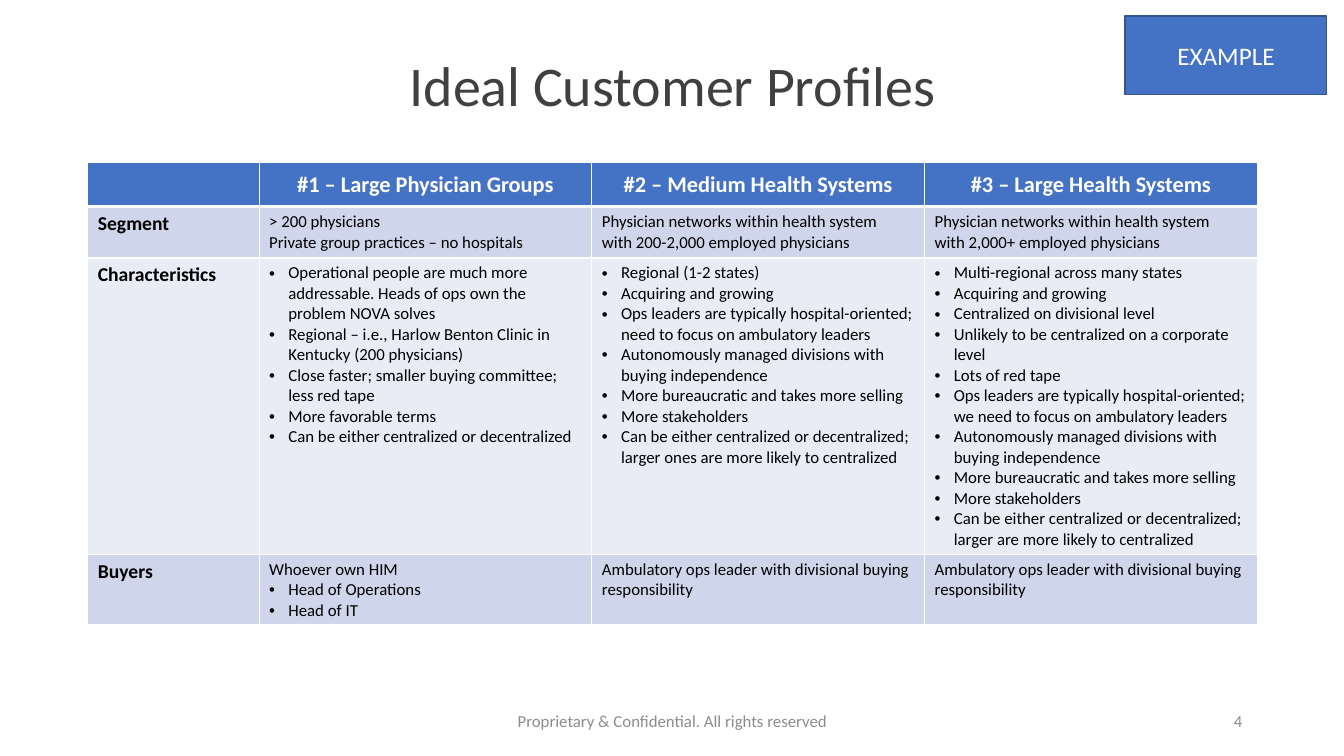
from pptx import Presentation
from pptx import util as u
from pptx.dml.color import RGBColor
from pptx.enum import shapes, text
from pptx.oxml import parse_xml
from pptx.oxml.ns import nsdecls

TITLE = "Ideal Customer Profiles"
TAG = "EXAMPLE"
FOOTER = "Proprietary & Confidential. All rights reserved"
PAGE = "4"

HEADINGS = ["", "#1 – Large Physician Groups", "#2 – Medium Health Systems",
            "#3 – Large Health Systems"]
# Each profile cell is (plain lines, bulleted lines).
ROWS = [
    ("Segment", [
        (["> 200 physicians", "Private group practices – no hospitals"], []),
        (["Physician networks within health system\vwith 200-2,000 employed physicians"], []),
        (["Physician networks within health system\vwith 2,000+ employed physicians"], []),
    ]),
    ("Characteristics", [
        ([], ["Operational people are much more addressable. Heads of ops own the "
              "problem NOVA solves",
              "Regional – i.e., Harlow Benton Clinic in Kentucky (200 physicians)",
              "Close faster; smaller buying committee; less red tape",
              "More favorable terms",
              "Can be either centralized or decentralized"]),
        ([], ["Regional (1-2 states)",
              "Acquiring and growing",
              "Ops leaders are typically hospital-oriented; need to focus on ambulatory leaders",
              "Autonomously managed divisions with buying independence",
              "More bureaucratic and takes more selling",
              "More stakeholders",
              "Can be either centralized or decentralized; larger ones are more likely "
              "to centralized"]),
        ([], ["Multi-regional across many states",
              "Acquiring and growing",
              "Centralized on divisional level",
              "Unlikely to be centralized on a corporate level",
              "Lots of red tape",
              "Ops leaders are typically hospital-oriented; we need to focus on "
              "ambulatory leaders",
              "Autonomously managed divisions with buying independence",
              "More bureaucratic and takes more selling",
              "More stakeholders",
              "Can be either centralized or decentralized; larger are more likely "
              "to centralized"]),
    ]),
    ("Buyers", [
        (["Whoever own HIM"], ["Head of Operations", "Head of IT"]),
        (["Ambulatory ops leader with divisional buying responsibility"], []),
        (["Ambulatory ops leader with divisional buying responsibility"], []),
    ]),
]
COLUMN_WIDTHS = [1.7, 3.3, 3.3, 3.3]
ROW_HEIGHTS = [0.44, 0.51, 2.94, 0.7]
BLUE, WHITE, BLACK, GRAY = "4472C4", "FFFFFF", "000000", "8C8C8C"
BANDS = ["CFD5EA", "E9EBF5"]
LEFT, CENTER, RIGHT = text.PP_ALIGN.LEFT, text.PP_ALIGN.CENTER, text.PP_ALIGN.RIGHT
MIDDLE = text.MSO_ANCHOR.MIDDLE


def paint(color_format, hex_color):
    color_format.rgb = RGBColor.from_string(hex_color)


def inches(*lengths):
    return [u.Inches(length) for length in lengths]


def style(paragraph, size, color, bold=False, align=LEFT):
    paragraph.alignment = align
    font = paragraph.font
    font.name, font.size, font.bold = "Calibri", u.Pt(size), bold
    paint(font.color, color)


def add_bullet(paragraph):
    properties = paragraph._p.get_or_add_pPr()
    indent = u.Inches(0.19)
    properties.set("marL", str(indent))
    properties.set("indent", str(-indent))
    for tag in ('a:buFont %s typeface="Arial"', 'a:buChar %s char="•"'):
        properties.append(parse_xml(f"<{tag % nsdecls('a')}/>"))


def format_cell(cell, fill, bottom=1):
    """Give the cell white borders and a plain fill."""
    for side, width in (("L", 1), ("R", 1), ("T", 1), ("B", bottom)):
        cell._tc.get_or_add_tcPr().append(parse_xml(
            f'<a:ln{side} {nsdecls("a")} w="{u.Pt(width)}"><a:solidFill>'
            f'<a:srgbClr val="{WHITE}"/></a:solidFill></a:ln{side}>'))
    cell.fill.solid()
    paint(cell.fill.fore_color, fill)


def fill_profile(frame, lines, bullets):
    frame.text = "\n".join(lines + bullets)
    for i, paragraph in enumerate(frame.paragraphs):
        if i >= len(lines):
            add_bullet(paragraph)
        style(paragraph, 12, BLACK)


def add_profiles(slide):
    table = slide.shapes.add_table(
        len(ROW_HEIGHTS), len(COLUMN_WIDTHS),
        *inches(0.87, 1.61, sum(COLUMN_WIDTHS), sum(ROW_HEIGHTS))).table
    table.horz_banding = False
    for column, width in zip(table.columns, COLUMN_WIDTHS):
        column.width = u.Inches(width)
    for row, height in zip(table.rows, ROW_HEIGHTS):
        row.height = u.Inches(height)

    for c, heading in enumerate(HEADINGS):
        cell = table.cell(0, c)
        format_cell(cell, BLUE, bottom=3)
        cell.vertical_anchor = MIDDLE
        cell.text = heading
        style(cell.text_frame.paragraphs[0], 16, WHITE, True, CENTER)

    for r, (label, profiles) in enumerate(ROWS, 1):
        for c in range(len(COLUMN_WIDTHS)):
            format_cell(table.cell(r, c), BANDS[(r - 1) % 2])
        label_frame = table.cell(r, 0).text_frame
        label_frame.text = label
        style(label_frame.paragraphs[0], 14, BLACK, True)
        for c, (lines, bullets) in enumerate(profiles, 1):
            fill_profile(table.cell(r, c).text_frame, lines, bullets)


def write(shape, words, size, color, align):
    """Write one vertically centred line in a shape."""
    frame = shape.text_frame
    frame.word_wrap = True
    frame.vertical_anchor = MIDDLE
    frame.text = words
    style(frame.paragraphs[0], size, color, align=align)


def main():
    deck = Presentation()
    deck.slide_width, deck.slide_height = inches(13.33, 7.5)
    slide = deck.slides.add_slide(deck.slide_layouts[5])

    title = slide.shapes.title
    title.left, title.top, title.width, title.height = inches(0.92, 0.4, 11.5, 0.95)
    write(title, TITLE, 40, "404040", CENTER)
    title.text_frame.paragraphs[0].line_spacing = 0.9

    for words, left, width, align in ((FOOTER, 4.42, 4.5, CENTER), (PAGE, 9.42, 3, RIGHT)):
        box = slide.shapes.add_textbox(*inches(left, 6.95, width, 0.4))
        write(box, words, 12, GRAY, align)

    add_profiles(slide)

    tag = slide.shapes.add_shape(shapes.MSO_SHAPE.RECTANGLE, *inches(11.16, 0.16, 2, 0.78))
    tag.shadow.inherit = False
    tag.fill.solid()
    paint(tag.fill.fore_color, BLUE)
    paint(tag.line.color, "325491")
    tag.line.width = u.Pt(1)
    write(tag, TAG, 18, WHITE, CENTER)

    deck.save("out.pptx")


if __name__ == "__main__":
    main()
